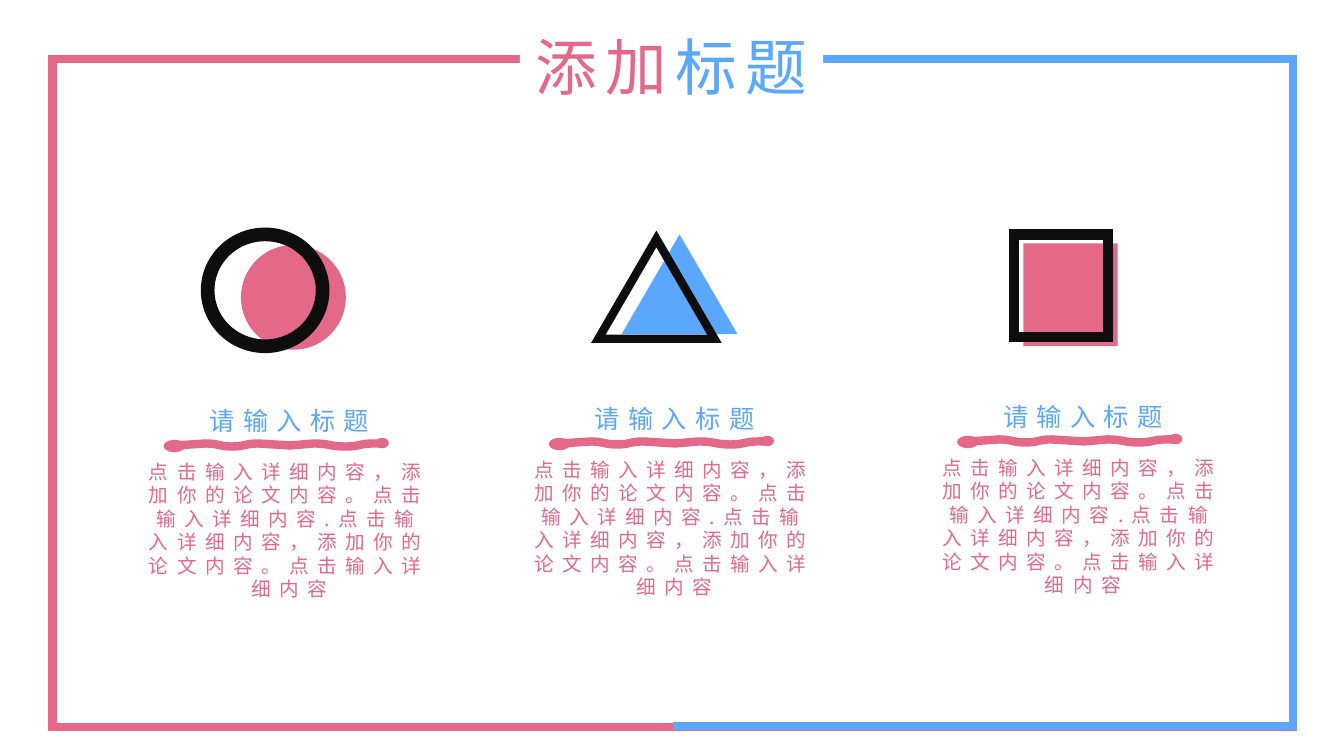
from lxml import etree
from pptx import Presentation
from pptx.dml.color import RGBColor
from pptx.enum.shapes import MSO_CONNECTOR, MSO_SHAPE
from pptx.enum.text import MSO_AUTO_SIZE, PP_ALIGN
from pptx.oxml.ns import qn
from pptx.util import Inches, Pt

RECTANGLE, OVAL, TRIANGLE = MSO_SHAPE.RECTANGLE, MSO_SHAPE.OVAL, MSO_SHAPE.ISOSCELES_TRIANGLE
STRAIGHT = MSO_CONNECTOR.STRAIGHT
GROW, CENTER = MSO_AUTO_SIZE.SHAPE_TO_FIT_TEXT, PP_ALIGN.CENTER
PINK, BLUE, BLACK, WHITE = "E46988", "5BA7FD", "0D0D0D", "FFFFFF"
FONT = "Noto Sans CJK SC"
HEADING = "请输入标题"
BODY = ("点击输入详细内容，添加你的论文内容。点击输入详细内容."
        "点击输入详细内容，添加你的论文内容。点击输入详细内容")

presentation = Presentation()
presentation.slide_width = Inches(13.33)
presentation.slide_height = Inches(7.5)
slide = presentation.slides.add_slide(presentation.slide_layouts[6])
shapes = slide.shapes
cell = presentation.slide_height / 75


def paint(shape, fill=None, line=None, weight=1):
    shape.shadow.inherit = False
    if fill:
        shape.fill.solid()
        shape.fill.fore_color.rgb = RGBColor.from_string(fill)
    else:
        shape.fill.background()
    if line:
        shape.line.color.rgb = RGBColor.from_string(line)
        shape.line.width = Pt(weight)
        etree.SubElement(shape.line._get_or_add_ln(), qn("a:miter"), lim="800000")
    else:
        shape.line.fill.background()


def write(shape, pieces, size, wrap=True):
    frame = shape.text_frame
    frame.word_wrap = wrap
    frame.auto_size = GROW
    paragraph = frame.paragraphs[0]
    paragraph.alignment = CENTER
    for text, color in pieces:
        run = paragraph.add_run()
        run.text = text
        run.font.size = Pt(size)
        run.font.name = FONT
        run.font.color.rgb = RGBColor.from_string(color)
        properties = run.font._element
        properties.set("spc", "600")
        etree.SubElement(properties, qn("a:ea"), typeface=FONT)


left, middle, right, top, bottom = 5.2, 66.75, 128.25, 5.85, 72
border = shapes.add_shape(
    RECTANGLE, *(int(n * cell) for n in (left, top, right - left, bottom - top + 0.1)))
paint(border, line=PINK, weight=6)
for ends in ((middle, top, right, top), (middle, bottom, right, bottom),
             (right, top - 0.4, right, bottom + 0.45)):
    edge = shapes.add_connector(STRAIGHT, *(int(n * cell) for n in ends))
    edge.line.color.rgb = RGBColor.from_string(BLUE)
    edge.line.width = Pt(6)
    etree.SubElement(edge._element.spPr, qn("a:effectLst"))

icons = [
    (OVAL, PINK, (23.9, 24.3, 10.4, 10.4), (20.6, 23.25, 11.4, 11.1), 9.75),
    (TRIANGLE, BLUE, (61.65, 23.25, 11.5, 9.9), (59.35, 23.7, 11.5, 9.9), 6),
    (RECTANGLE, PINK, (101.5, 24.15, 9.35, 10.2), (100.55, 23.25, 9.35, 10.2), 7.5),
]
for kind, color, solid_box, outline_box, weight in icons:
    solid = shapes.add_shape(kind, *(int(n * cell) for n in solid_box))
    paint(solid, fill=color)
    outline = shapes.add_shape(kind, *(int(n * cell) for n in outline_box))
    paint(outline, line=BLACK, weight=weight)

wave = [(0, 0.2), (3, 0), (5.6, 0.3), (8.2, 0), (11.4, 0.2),
        (13.7, 0), (16.9, 0.3), (19.6, 0), (20.7, 0)]

for column, row in ((13.8, 39.7), (52, 39.5), (92.5, 39.3)):
    body = shapes.add_textbox(
        *(int(n * cell) for n in (column, row + 5.5, 29.8, 17.3)))
    frame = body.text_frame
    frame.margin_left = frame.margin_right = Inches(0.08)
    frame.margin_top = frame.margin_bottom = Inches(0.04)
    write(body, [(BODY, PINK)], 14)

    heading = shapes.add_textbox(*(int(n * cell) for n in (column + 1.75, row, 26.3, 4)))
    write(heading, [(HEADING, BLUE)], 18)

    points = [((column + 3.6 + x) * cell, (row + 4.3 + y) * cell) for x, y in wave]
    builder = shapes.build_freeform(*points[0])
    builder.add_line_segments(points[1:], close=False)
    underline = builder.convert_to_shape()
    paint(underline, line=PINK, weight=6)
    anchors = list(underline._element.iter(qn("a:pt")))
    for start, end in zip(anchors, anchors[1:]):
        segment = end.getparent()
        segment.tag = qn("a:cubicBezTo")
        center = str((int(start.get("x")) + int(end.get("x"))) // 2)
        for index, anchor in enumerate((start, end)):
            control = etree.Element(qn("a:pt"), x=center, y=anchor.get("y"))
            segment.insert(index, control)

    for x, y, width, height in ((2.5, 4, 2, 1.1), (23.5, 3.8, 1.2, 0.9)):
        tip = shapes.add_shape(
            OVAL, *(int(n * cell) for n in (column + x, row + y, width, height)))
        paint(tip, fill=PINK, line=PINK)

title = shapes.add_shape(RECTANGLE, *(int(n * cell) for n in (51.55, 2.3, 30.1, 8.4)))
paint(title, fill=WHITE)
write(title, [("添加", PINK), ("标题", BLUE)], 44, wrap=False)

presentation.save("out.pptx")
